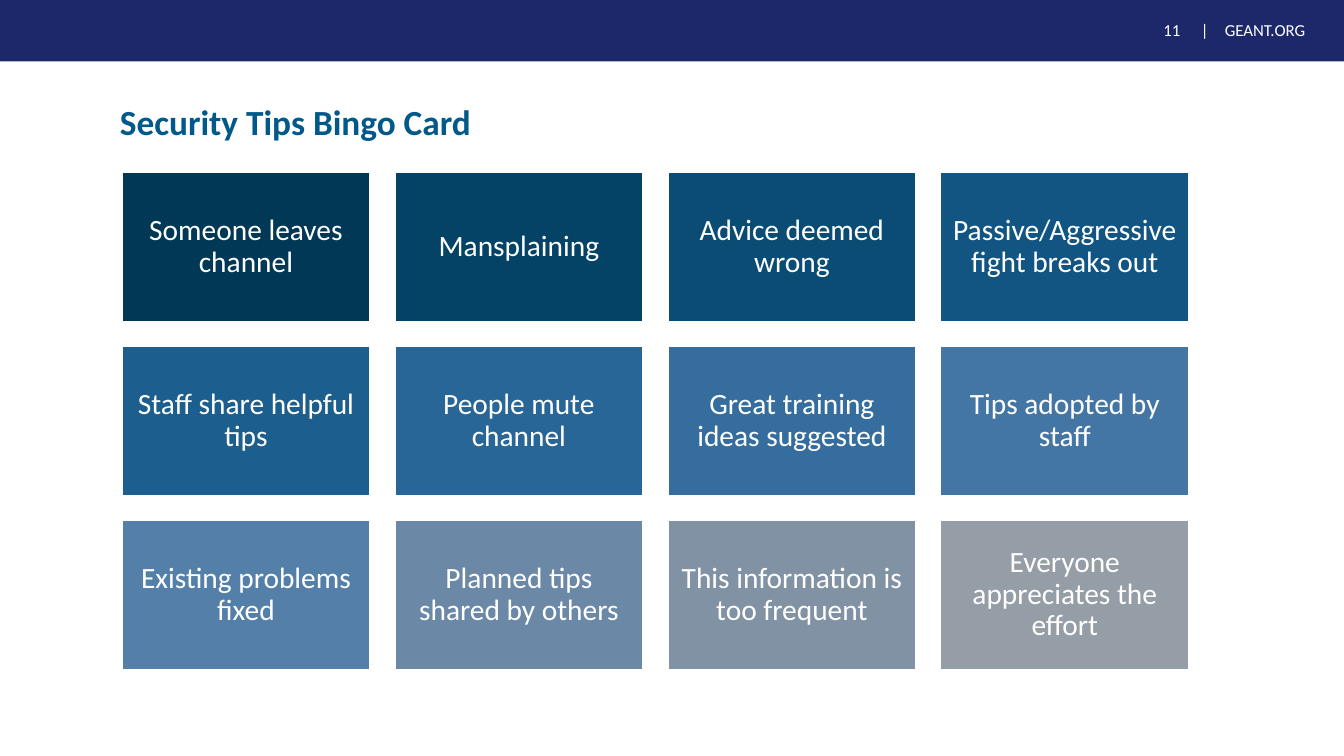
from dataclasses import dataclass

from lxml import etree
from pptx import Presentation
from pptx.dml.color import RGBColor
from pptx.enum.shapes import MSO_SHAPE
from pptx.enum.text import MSO_ANCHOR, PP_ALIGN
from pptx.oxml.ns import qn
from pptx.util import Inches, Pt

FONT = "Calibri"
COLORS = {"white": "FFFFFF", "banner": "1D286B", "title": "005988"}

COLUMNS = 4
GRID_LEFT, GRID_TOP = 1.21, 1.71
CARD_WIDTH, CARD_HEIGHT = 2.46, 1.48
STEP_X, STEP_Y = 2.707, 1.725


@dataclass
class Card:
    text: str
    fill: str


CARDS = [
    Card("Someone leaves channel", "003855"),
    Card("Mansplaining", "044366"),
    Card("Advice deemed wrong", "0B4C75"),
    Card("Passive/Aggressive fight breaks out", "125582"),
    Card("Staff share helpful tips", "1C5E8D"),
    Card("People mute channel", "276696"),
    Card("Great training ideas suggested", "356E9E"),
    Card("Tips adopted by staff", "4376A4"),
    Card("Existing problems fixed", "547FA8"),
    Card("Planned tips shared by others", "6B88A6"),
    Card("This information is too frequent", "8192A5"),
    Card("Everyone appreciates the effort", "959DA6"),
]


def write(sp, text: str, *, size: float, color: str = COLORS["white"],
          bold: bool = False, align=PP_ALIGN.LEFT, spacing: float = 0.9,
          inset: float = 0.1, left_inset: float | None = None,
          tab: float | None = None) -> None:
    """Fill a shape with one formatted paragraph."""
    tf = sp.text_frame
    tf.word_wrap = True
    tf.vertical_anchor = MSO_ANCHOR.MIDDLE
    tf.margin_left = Inches(inset if left_inset is None else left_inset)
    tf.margin_right = Inches(inset)
    tf.margin_top = tf.margin_bottom = Inches(min(inset, 0.09))
    p = tf.paragraphs[0]
    p.alignment = align
    p.line_spacing = spacing
    p.space_before = Pt(0)
    if tab is not None:
        tabs = etree.SubElement(p._p.get_or_add_pPr(), qn("a:tabLst"))
        etree.SubElement(tabs, qn("a:tab"), pos=str(Inches(tab)), algn="l")
    r = p.add_run()
    r.text = text
    r.font.name = FONT
    r.font.size = Pt(size)
    r.font.bold = bold
    r.font.color.rgb = RGBColor.from_string(color)


def add_rect(slide, left: float, top: float, width: float, height: float,
             fill: str, outlined: bool = False):
    sp = slide.shapes.add_shape(MSO_SHAPE.RECTANGLE, Inches(left), Inches(top),
                                Inches(width), Inches(height))
    sp.shadow.inherit = False
    sp.fill.solid()
    sp.fill.fore_color.rgb = RGBColor.from_string(fill)
    if outlined:
        sp.line.color.rgb = RGBColor.from_string(COLORS["white"])
        sp.line.width = Pt(1)
    else:
        sp.line.fill.background()
    return sp


def add_text(slide, left: float, top: float, width: float, height: float,
             text: str, **style) -> None:
    sp = slide.shapes.add_textbox(Inches(left), Inches(top),
                                  Inches(width), Inches(height))
    write(sp, text, **style)


def main() -> None:
    prs = Presentation()
    prs.slide_width, prs.slide_height = Inches(13.33), Inches(7.5)
    slide = prs.slides.add_slide(prs.slide_layouts[5])

    # Banner with page number and site
    add_rect(slide, 0, -0.04, 13.33, 0.65, COLORS["banner"])
    add_text(slide, 11.36, 0.12, 0.73, 0.36, "11\t|", size=12, spacing=1,
             left_inset=0.18, tab=0.37)
    add_text(slide, 12.05, 0.15, 1.28, 0.32, "GEANT.ORG", size=12)

    # Title
    title = slide.shapes.title
    title.left, title.top = Inches(1.09), Inches(1)
    title.width, title.height = Inches(10.82), Inches(0.47)
    write(title, "Security Tips Bingo Card", size=25.2,
          color=COLORS["title"], bold=True)

    # Bingo cards
    for i, card in enumerate(CARDS):
        row, col = divmod(i, COLUMNS)
        sp = add_rect(slide, GRID_LEFT + col * STEP_X, GRID_TOP + row * STEP_Y,
                      CARD_WIDTH, CARD_HEIGHT, card.fill, outlined=True)
        write(sp, card.text, size=21, align=PP_ALIGN.CENTER, inset=0.09)

    prs.save("out.pptx")


if __name__ == "__main__":
    main()
